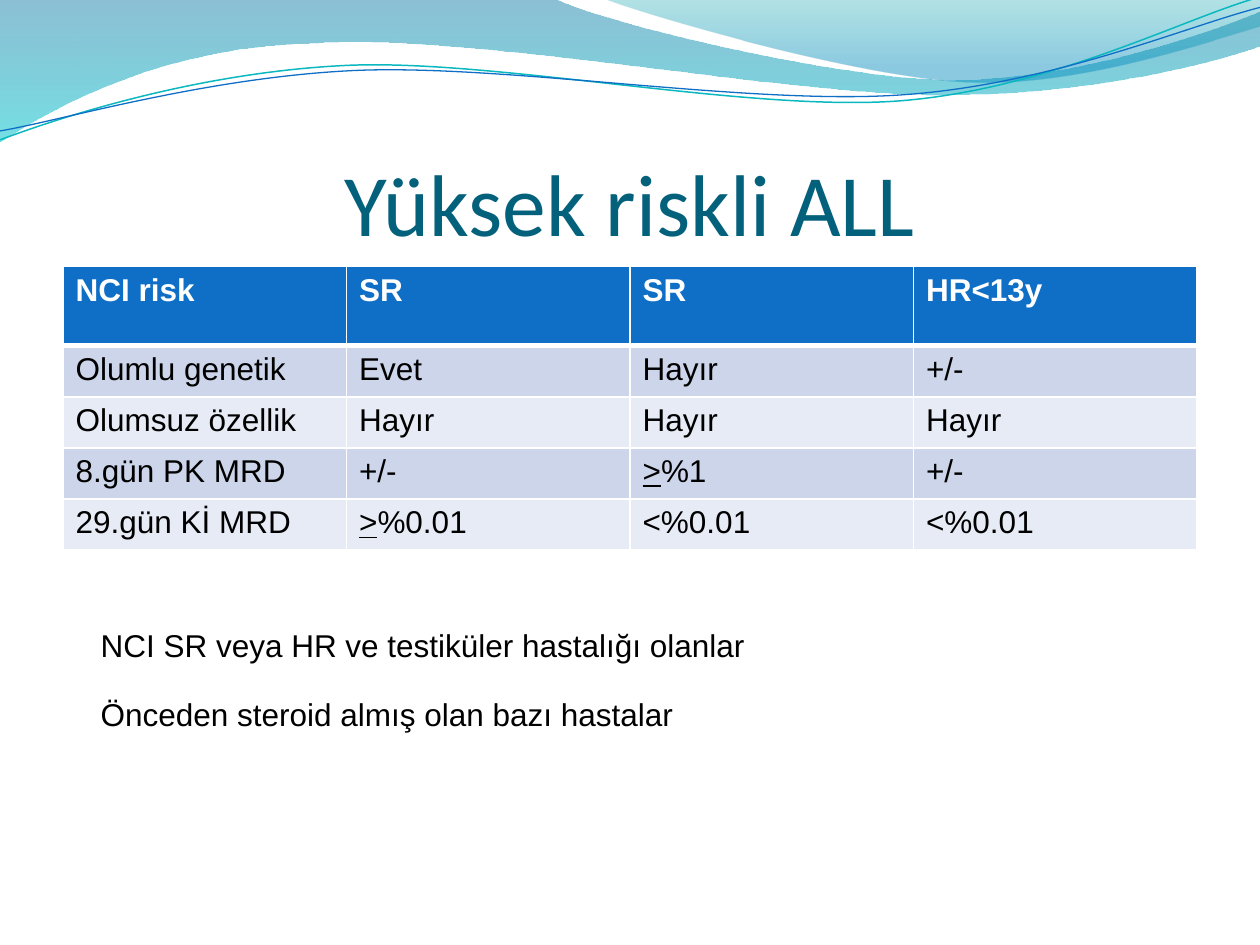
"""Build the high-risk ALL slide with its wave header, risk table and two notes."""
import dataclasses

import lxml.etree
import pptx
import pptx.dml.color
import pptx.enum.text
import pptx.oxml.ns
import pptx.util

Cm, Pt = pptx.util.Cm, pptx.util.Pt
RGB = pptx.dml.color.RGBColor.from_string
qn = pptx.oxml.ns.qn


@dataclasses.dataclass(frozen=True)
class Theme:
    heading_font: str = "Calibri"
    body_font: str = "Arial"
    heading_size: int = 50
    body_size: int = 18
    heading: str = "04617B"
    text: str = "000000"
    white: str = "FFFFFF"
    header: str = "0F6FC6"
    bands: tuple = ("CCD5EA", "E7EBF5")
    deep_wave: tuple = ((0, "0074A1", 45), (1, "00C6CF", 55))
    light_wave: tuple = ((0, "00A1A9", 30), (0.8, "008BBF", 45))
    teal_line: str = "0AB8BF"
    blue_line: str = "0F6FC6"


theme = Theme()


def write(frame, text, font=theme.body_font, size=theme.body_size, color=theme.text,
          bold=False, align=pptx.enum.text.PP_ALIGN.LEFT, underlined=0):
    paragraph = frame.paragraphs[0]
    paragraph.alignment = align
    for part, underline in ((text[:underlined], True), (text[underlined:], False)):
        if part:
            run = paragraph.add_run()
            run.text = part
            run.font.name = font
            run.font.size = Pt(size)
            run.font.bold = bold
            run.font.underline = underline
            run.font.color.rgb = RGB(color)


def outline(shapes, start, segments, closed):
    builder = shapes.build_freeform(Cm(start[0]), Cm(start[1]))
    builder.add_line_segments([(Cm(s[-2]), Cm(s[-1])) for s in segments], close=closed)
    shape = builder.convert_to_shape()
    shape.shadow.inherit = False
    for line, segment in zip(list(shape.element.iter(qn("a:lnTo"))), segments):
        if len(segment) == 6:
            curve = lxml.etree.Element(qn("a:cubicBezTo"))
            for x, y in zip(segment[::2], segment[1::2]):
                lxml.etree.SubElement(curve, qn("a:pt"), x=str(Cm(x) - shape.left),
                                      y=str(Cm(y) - shape.top))
            line.getparent().replace(line, curve)
    return shape


deck = pptx.Presentation()
deck.slide_width, deck.slide_height = Cm(25.4), Cm(19.05)
slide = deck.slides.add_slide(deck.slide_layouts[5])
heading = slide.shapes.title

waves = [
    (theme.deep_wave, (0, 0), [
        (11.18, -0.03), (12.09, 0.43, 16.87, 1.6, 19.25, 1.6),
        (21.67, 1.6, 24.33, 0.66, 25.4, 0.23), (25.43, 0.91),
        (24.97, 1.12, 22.1, 1.93, 18.95, 1.91), (15.75, 1.91, 9.7, 0.71, 6.53, 0.86),
        (3.28, 0.91, 1.17, 2.11, -0.03, 2.87)]),
    (theme.light_wave, (12.17, -0.03), [
        (12.93, 0.28, 17.32, 1.57, 19.53, 1.65), (21.74, 1.75, 24.41, 0.81, 25.4, 0.53),
        (25.4, 0)]),
]
for stops, start, segments in waves:
    wave = outline(slide.shapes, start, segments, closed=True)
    wave.line.fill.background()
    wave.fill.gradient()
    wave.fill.gradient_angle = 270
    for stop, (position, color, opacity) in zip(wave.fill.gradient_stops, stops):
        stop.position = position
        stop.color.rgb = RGB(color)
    for tint, (position, color, opacity) in zip(wave.element.spPr.iter(qn("a:srgbClr")), stops):
        lxml.etree.SubElement(tint, qn("a:alpha"), val=str(opacity * 1000))
    heading.element.addprevious(wave.element)

ripples = [
    (theme.teal_line, 0.85, (-0.05, 2.22), [
        (1.19, 1.82, 4.02, 1.04, 7.05, 1.05), (10.05, 1.07, 15.02, 2.37, 18.08, 2.29),
        (21.13, 2.2, 23.87, 0.91, 25.41, 0.55)]),
    (theme.blue_line, 0.75, (-0.04, 2.04), [
        (1.16, 1.9, 4.18, 1.15, 7.2, 1.16), (10.25, 1.18, 15.13, 2.25, 18.18, 2.17),
        (21.21, 2.1, 23.93, 1.06, 25.45, 0.75)]),
]
for color, width, start, segments in ripples:
    ripple = outline(slide.shapes, start, segments, closed=False)
    ripple.rotation = 357.3
    ripple.fill.background()
    ripple.line.color.rgb = RGB(color)
    ripple.line.width = Pt(width)
    heading.element.addprevious(ripple.element)

heading.left, heading.top, heading.width, heading.height = Cm(1.27), Cm(1.95), Cm(22.86), Cm(3.18)
heading_frame = heading.text_frame
heading_frame.auto_size = pptx.enum.text.MSO_AUTO_SIZE.NONE
heading_frame.vertical_anchor = pptx.enum.text.MSO_ANCHOR.BOTTOM
heading_frame.margin_left = heading_frame.margin_right = heading_frame.margin_bottom = 0
heading_frame.margin_top = Cm(0.13)
write(heading_frame, "Yüksek riskli ALL", font=theme.heading_font, size=theme.heading_size,
      color=theme.heading, align=pptx.enum.text.PP_ALIGN.CENTER)

criteria = [
    ("NCI risk", "SR", "SR", "HR<13y"),
    ("Olumlu genetik", "Evet", "Hayır", "+/-"),
    ("Olumsuz özellik", "Hayır", "Hayır", "Hayır"),
    ("8.gün PK MRD", "+/-", ">%1", "+/-"),
    ("29.gün Kİ MRD", ">%0.01", "<%0.01", "<%0.01"),
]
header_height, row_height = 1.6, 1.03
risk_table = slide.shapes.add_table(
    len(criteria), len(criteria[0]), Cm(1.27), Cm(5.37), Cm(22.86),
    Cm(header_height + row_height * (len(criteria) - 1))).table
for r, values in enumerate(criteria):
    is_header = r == 0
    risk_table.rows[r].height = Cm(header_height if is_header else row_height)
    edges = {"L": 1, "R": 1, "T": 3 if r == 1 else 1, "B": 3 if is_header else 1}
    for c, value in enumerate(values):
        cell = risk_table.cell(r, c)
        properties = cell._tc.get_or_add_tcPr()
        for side, width in edges.items():
            edge = lxml.etree.SubElement(properties, qn(f"a:ln{side}"), w=str(Pt(width)))
            paint = lxml.etree.SubElement(edge, qn("a:solidFill"))
            lxml.etree.SubElement(paint, qn("a:srgbClr"), val=theme.white)
        cell.fill.solid()
        cell.fill.fore_color.rgb = RGB(theme.header if is_header else theme.bands[(r - 1) % 2])
        write(cell.text_frame, value, color=theme.white if is_header else theme.text,
              bold=is_header, underlined=int(value.startswith(">")))

remarks = [
    ("NCI SR veya HR ve testiküler hastalığı olanlar", 12.5, 22.02),
    ("Önceden steroid almış olan bazı hastalar", 13.89, 14.88),
]
for remark, top, width in remarks:
    remark_frame = slide.shapes.add_textbox(Cm(1.78), Cm(top), Cm(width), Cm(1.02)).text_frame
    remark_frame.word_wrap = True
    remark_frame.auto_size = pptx.enum.text.MSO_AUTO_SIZE.SHAPE_TO_FIT_TEXT
    write(remark_frame, remark)

deck.save("out.pptx")
